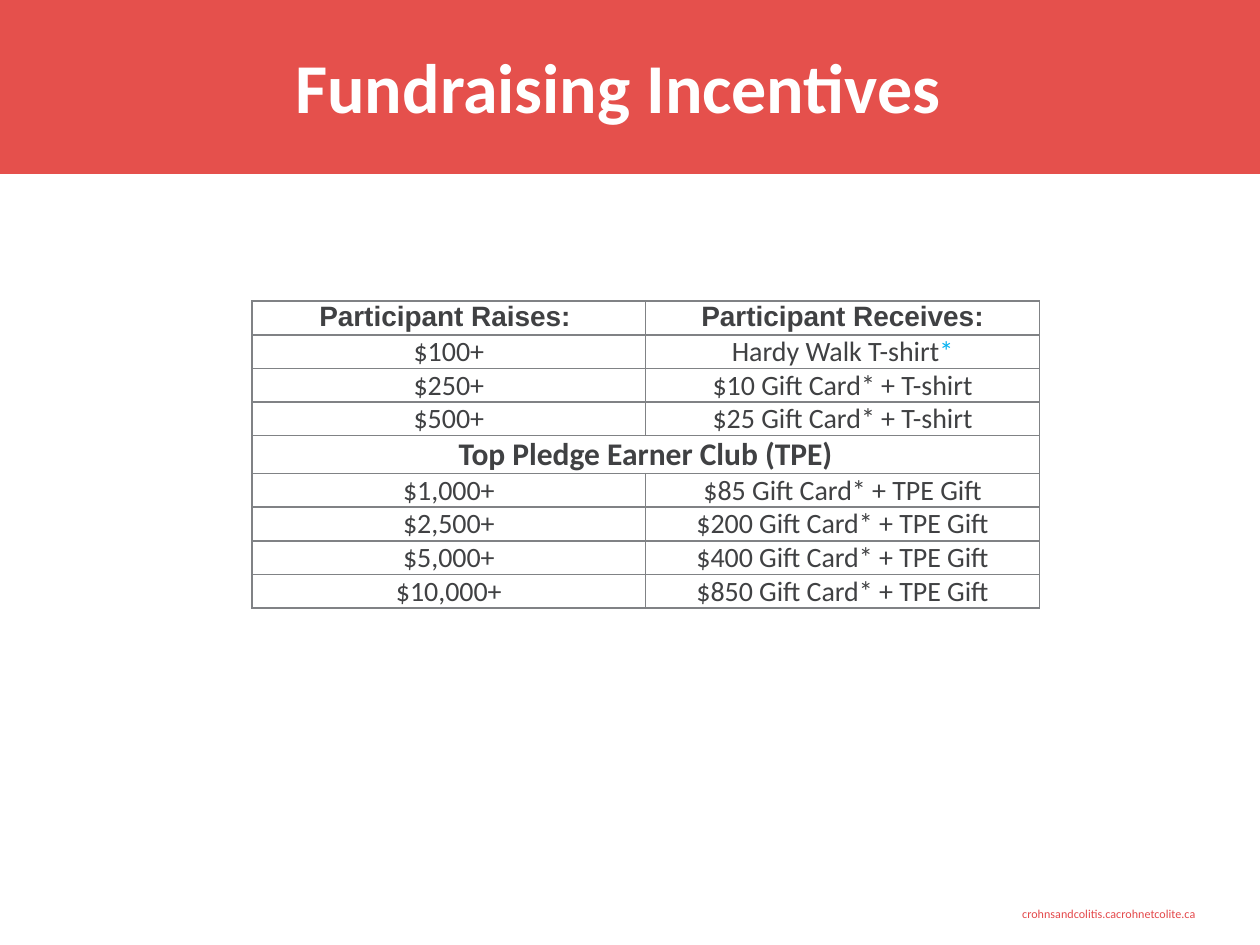
from lxml.etree import SubElement
from pptx import Presentation
from pptx.dml.color import RGBColor
from pptx.enum.shapes import MSO_SHAPE
from pptx.enum.text import MSO_ANCHOR, PP_ALIGN
from pptx.oxml.ns import qn
from pptx.util import Inches, Pt

RED = RGBColor(0xE5, 0x50, 0x4C)
LINK = RGBColor(0xE4, 0x49, 0x4B)
WHITE = RGBColor(0xFF, 0xFF, 0xFF)
DARK = RGBColor(0x40, 0x41, 0x43)
BLUE = RGBColor(0x00, 0xB0, 0xF0)
GREY = RGBColor(0x80, 0x82, 0x85)

CLUB = "Top Pledge Earner Club (TPE)"
ROWS = [
    ("Participant Raises: ", "Participant Receives:"),
    ("$100+", "Hardy Walk T-shirt"),
    ("$250+", "$10 Gift Card* + T-shirt"),
    ("$500+", "$25 Gift Card* + T-shirt"),
    (CLUB, ""),
    ("$1,000+", "$85 Gift Card* + TPE Gift"),
    ("$2,500+", "$200 Gift Card* + TPE Gift"),
    ("$5,000+", "$400 Gift Card* + TPE Gift"),
    ("$10,000+", "$850 Gift Card* + TPE Gift"),
]


def style(run, size, color, bold=False, face="Calibri"):
    font = run.font
    font.name, font.size, font.bold = face, Pt(size), bold
    font.color.rgb = color


def add_label(slide, box, text, align):
    frame = slide.shapes.add_textbox(*map(Inches, box)).text_frame
    frame.text = text
    frame.paragraphs[0].alignment = align
    return frame


def add_header(slide, box):
    left, top, width, height = box
    band = slide.shapes.add_shape(MSO_SHAPE.RECTANGLE, *map(Inches, box))
    band.shadow.inherit = False
    band.fill.solid()
    band.fill.fore_color.rgb = RED
    band.line.fill.background()
    place = (left + 1.78, top + 0.33, 6.31, 0.77)
    frame = add_label(slide, place, "Fundraising Incentives", PP_ALIGN.CENTER)
    frame.word_wrap = False
    style(frame.paragraphs[0].runs[0], 40, WHITE, True)


def add_border(cell):
    props = cell._tc.get_or_add_tcPr()
    for spot, side in enumerate(("a:lnL", "a:lnR", "a:lnT", "a:lnB")):
        line = props.makeelement(qn(side), {"w": str(Pt(1))})
        fill = SubElement(line, qn("a:solidFill"))
        SubElement(fill, qn("a:srgbClr"), val=str(GREY))
        props.insert(spot, line)


def fill_cell(cell, text, size, bold, face):
    cell.margin_left = cell.margin_right = 0
    cell.margin_top = cell.margin_bottom = 0
    cell.fill.background()
    add_border(cell)
    para = cell.text_frame.paragraphs[0]
    para.text = text
    para.alignment = PP_ALIGN.CENTER
    para.font.size = Pt(size)
    for run in para.runs:
        style(run, size, DARK, bold, face)


def add_grid(slide, box):
    left, top, width, height = map(Inches, box)
    grid = slide.shapes.add_table(len(ROWS), 2, left, top, width, height).table
    grid.first_row = grid.horz_banding = False
    for row, texts in enumerate(ROWS):
        head, club = row == 0, texts[0] == CLUB
        grid.rows[row].height = Inches(0.3 if club else 0.26)
        face = "Arial" if head else "Calibri"
        for col, text in enumerate(texts):
            fill_cell(grid.cell(row, col), text, 18 if club else 16, head or club, face)
        if club:
            grid.cell(row, 0).merge(grid.cell(row, 1))
    star = grid.cell(1, 1).text_frame.paragraphs[0].add_run()
    star.text = "*"
    style(star, 16, BLUE)


def add_footer(slide, box):
    frame = add_label(slide, box, "crohnsandcolitis.cacrohnetcolite.ca", PP_ALIGN.RIGHT)
    frame.word_wrap = True
    frame.vertical_anchor = MSO_ANCHOR.MIDDLE
    frame.margin_top = Inches(0.12)
    run = frame.paragraphs[0].runs[0]
    style(run, 12, LINK)
    run.font._element.set("baseline", "30000")


def main():
    deck = Presentation()
    deck.slide_width, deck.slide_height = Inches(10), Inches(7.5)
    slide = deck.slides.add_slide(deck.slide_layouts[6])
    add_footer(slide, (5.49, 7.09, 4.1, 0.3))
    add_header(slide, (-0.03, -0.03, 10.08, 1.41))
    add_grid(slide, (2, 2.39, 6.25, 2.43))
    deck.save("out.pptx")


if __name__ == "__main__":
    main()
